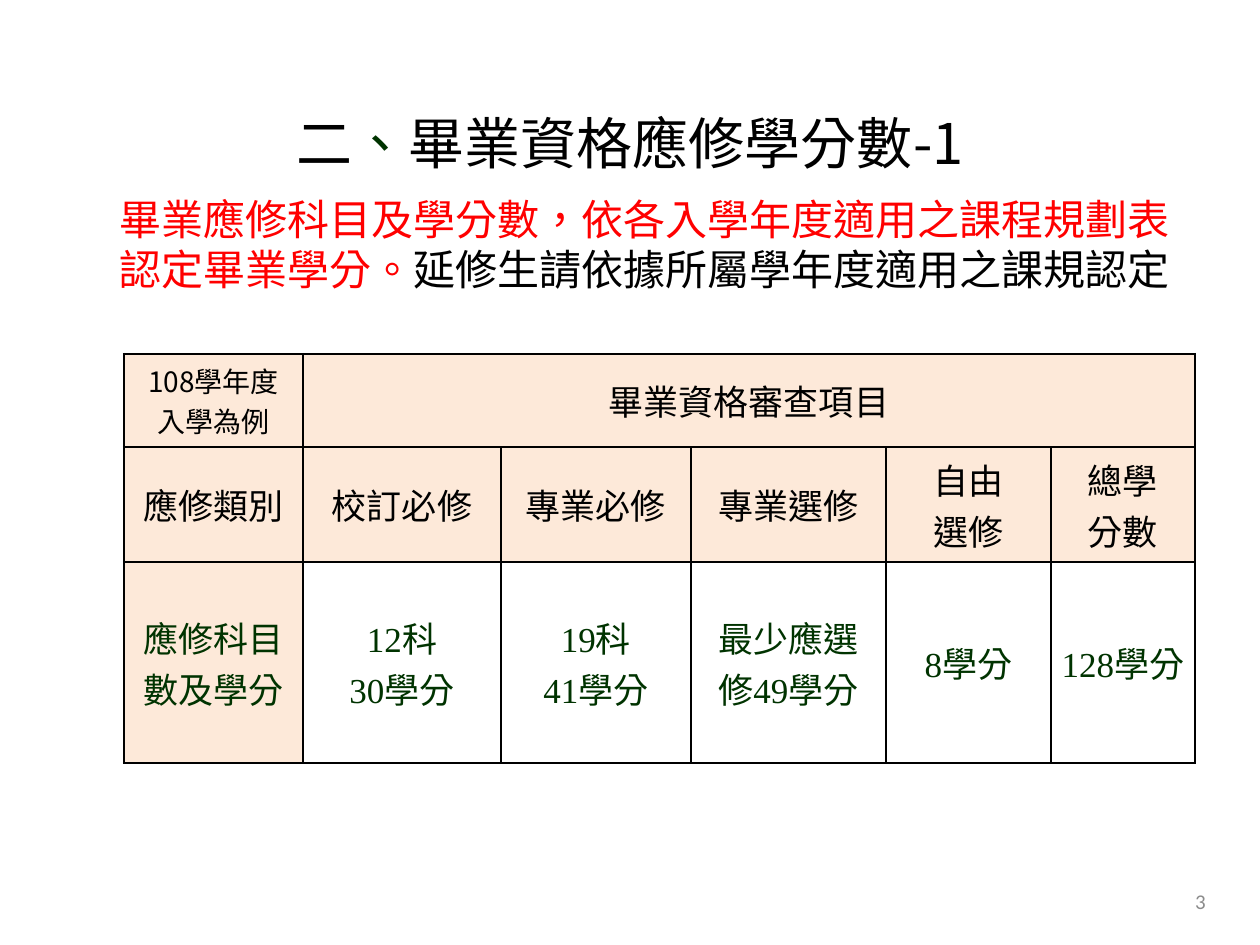
import pptx
import pptx.util
import pptx.dml.color
import pptx.enum.text
import pptx.oxml.ns
import lxml.etree

PX = 914400 / 126
HUES = {"black": "000000", "green": "003300", "red": "FF0000",
        "peach": "FDE9D9", "gray": "8C8C8C"}
SANS = "Noto Sans CJK SC"
SERIF = "Times New Roman"
ALIGN = pptx.enum.text.PP_ALIGN
ANCHOR = pptx.enum.text.MSO_ANCHOR

COLS = [179, 198, 190, 195, 165, 144]
ROWS = [93, 115, 201]
CELLS = [
    [["108學年度", "入學為例"], ["畢業資格審查項目"]],
    [["應修類別"], ["校訂必修"], ["專業必修"], ["專業選修"],
     ["自由", "選修"], ["總學", "分數"]],
    [["應修科目數及學分"], ["12科", "30學分"], ["19科", "41學分"],
     ["最少應選修49學分"], ["8學分"], ["128學分"]],
]


def px(num):
    return pptx.util.Emu(round(num * PX))


def hue(name):
    return pptx.dml.color.RGBColor.from_string(HUES[name])


def write(frame, paras, size, font=SANS, east=SANS, color="black",
          align=ALIGN.CENTER, line=None):
    """Fill a frame; a paragraph is a string or a list of (text, color)."""
    frame.word_wrap = True
    for i, runs in enumerate(paras):
        para = frame.add_paragraph() if i else frame.paragraphs[0]
        para.alignment = align
        para.space_before = pptx.util.Pt(0)
        if line:
            para.line_spacing = pptx.util.Pt(line)
        if isinstance(runs, str):
            runs = [(runs, color)]
        for text, tint in runs:
            run = para.add_run()
            run.text = text
            run.font.size = pptx.util.Pt(size)
            run.font.name = font
            run.font.color.rgb = hue(tint)
            props = run._r.get_or_add_rPr()
            props.set("lang", "zh-TW")
            face = lxml.etree.SubElement(props, pptx.oxml.ns.qn("a:ea"))
            face.set("typeface", east)


def place(shape, left, top, width, height):
    shape.left, shape.top = px(left), px(top)
    shape.width, shape.height = px(width), px(height)


def add_text(slide, box, paras, anchor, inset=6, **style):
    frame = slide.shapes.add_textbox(*map(px, box)).text_frame
    frame.vertical_anchor = anchor
    frame.margin_top = px(inset)
    write(frame, paras, **style)


def add_title(slide):
    title = slide.shapes.title
    place(title, 0, 67, 1260, 121)
    frame = title.text_frame
    frame.vertical_anchor = ANCHOR.MIDDLE
    frame.margin_top = px(6)
    write(frame, [[("二", "black"), ("、", "green"),
                   ("畢業資格應修學分數-1", "black")]],
          size=32, font="Noto Sans CJK JP", east="Noto Sans CJK JP", line=55)


def edge(cell, row, col):
    """Draw cell borders, thicker on the left, top and right of the table."""
    thick = {"L": col == 0, "R": col == len(COLS) - 1, "T": row == 0, "B": False}
    props = cell._tc.get_or_add_tcPr()
    for side, wide in thick.items():
        line = lxml.etree.SubElement(props, pptx.oxml.ns.qn("a:ln" + side))
        line.set("w", str(pptx.util.Pt(1.5 if wide else 1)))
        fill = lxml.etree.SubElement(line, pptx.oxml.ns.qn("a:solidFill"))
        tint = lxml.etree.SubElement(fill, pptx.oxml.ns.qn("a:srgbClr"))
        tint.set("val", HUES["black"])


def add_grid(slide):
    table = slide.shapes.add_table(
        len(ROWS), len(COLS), px(124), px(354),
        px(sum(COLS)), px(sum(ROWS))).table
    table.first_row = table.horz_banding = False
    for col, width in zip(table.columns, COLS):
        col.width = px(width)
    for row, height in zip(table.rows, ROWS):
        row.height = px(height)
    table.cell(0, 1).merge(table.cell(0, len(COLS) - 1))

    for r in range(len(ROWS)):
        for c in range(len(COLS)):
            cell = table.cell(r, c)
            edge(cell, r, c)
            if r < 2 or c == 0:
                cell.fill.solid()
                cell.fill.fore_color.rgb = hue("peach")
            else:
                cell.fill.background()
            if cell.is_spanned:
                continue
            first = r == c == 0
            cell.vertical_anchor = ANCHOR.TOP if first else ANCHOR.MIDDLE
            if c == len(COLS) - 1:
                cell.margin_left = cell.margin_right = 0
                cell.margin_top = cell.margin_bottom = 0
            write(cell.text_frame, CELLS[r][c], size=16 if first else 20,
                  font=SANS if first else SERIF,
                  color="green" if r == 2 else "black")


def main():
    deck = pptx.Presentation()
    deck.slide_width, deck.slide_height = px(1260), px(945)
    slide = deck.slides.add_slide(deck.slide_layouts[5])
    add_title(slide)
    add_text(slide, (107, 175, 1091, 189),
             ["畢業應修科目及學分數，依各入學年度適用之課程規劃表",
              [("認定畢業學分。", "red"),
               ("延修生請依據所屬學年度適用之課規認定", "black")]],
             ANCHOR.TOP, inset=19, size=24, color="red",
             align=ALIGN.LEFT, line=28.6)
    add_grid(slide)
    add_text(slide, (924, 876, 294, 50), ["3"], ANCHOR.MIDDLE, size=12,
             font="Calibri", color="gray", align=ALIGN.RIGHT)
    deck.save("out.pptx")


if __name__ == "__main__":
    main()
